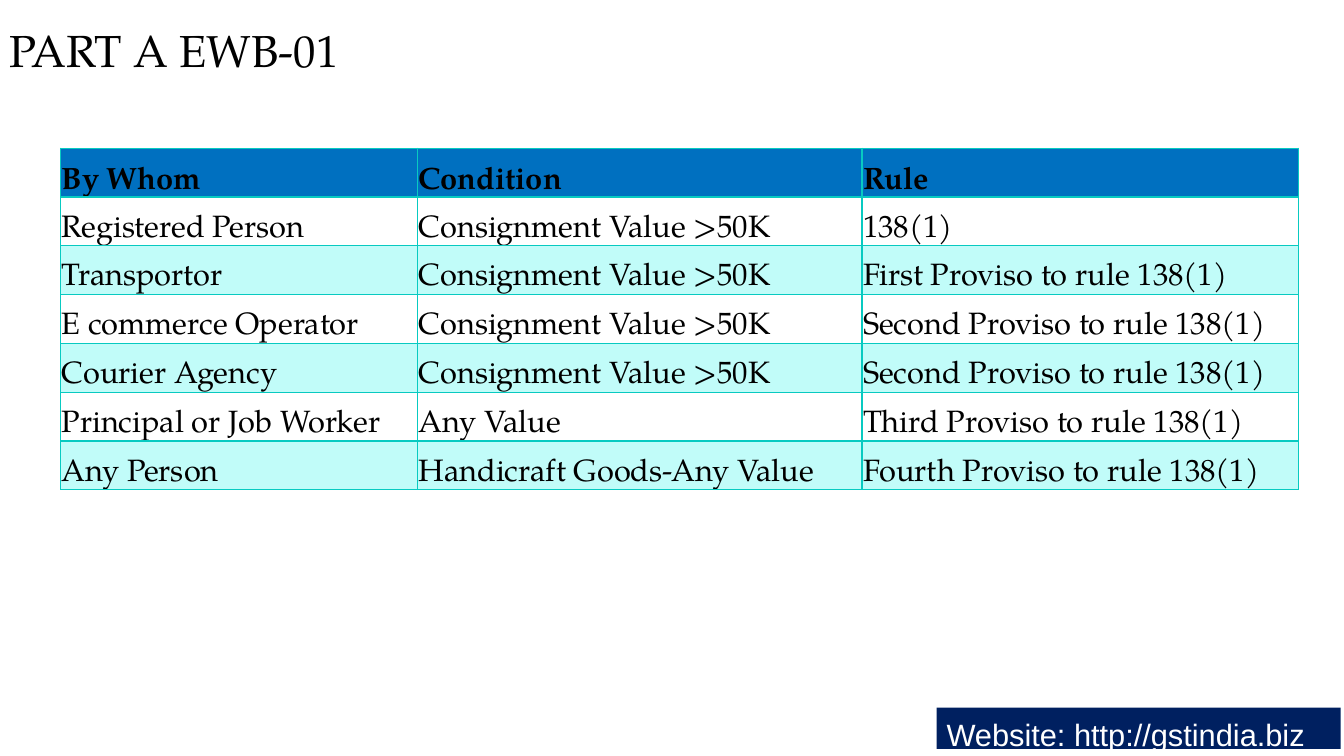
from lxml import etree
from pptx import Presentation
from pptx.dml.color import RGBColor
from pptx.enum.shapes import MSO_SHAPE
from pptx.enum.text import MSO_ANCHOR, PP_ALIGN
from pptx.oxml.ns import qn
from pptx.util import Pt

RECT = MSO_SHAPE.RECTANGLE
TOP, BOTTOM = MSO_ANCHOR.TOP, MSO_ANCHOR.BOTTOM
LEFT = PP_ALIGN.LEFT

COLORS = {
    "text": "000000",
    "header": "0070C0",
    "band": "C1FCF9",
    "border": "08CAC1",
    "footer": "002060",
    "footer_text": "FFFFFF",
}
SERIF = "TeX Gyre Pagella"
TITLE = {"name": SERIF, "size": Pt(32), "bold": False}
HEADER = {"name": SERIF, "size": Pt(22), "bold": True}
BODY = {"name": SERIF, "size": Pt(22), "bold": False}
FOOTER = {"name": "Arial", "size": Pt(22), "bold": False}


def write(tf, text, fmt, color, spacing=1.0):
    p = tf.paragraphs[0]
    p.alignment = LEFT
    p.line_spacing = spacing
    r = p.add_run()
    r.text = text
    for name, value in fmt.items():
        setattr(r.font, name, value)
    r.font.color.rgb = RGBColor.from_string(COLORS[color])


def add_borders(cell):
    tcPr = cell._tc.get_or_add_tcPr()
    for i, side in enumerate(("lnL", "lnR", "lnT", "lnB")):
        ln = etree.Element(qn(f"a:{side}"), w=str(Pt(1)))
        fill = etree.SubElement(ln, qn("a:solidFill"))
        etree.SubElement(fill, qn("a:srgbClr"), val=COLORS["border"])
        tcPr.insert(i, ln)


prs = Presentation()
prs.slide_width, prs.slide_height = Pt(960), Pt(540)
s = prs.slides.add_slide(prs.slide_layouts[6])

title = s.shapes.add_textbox(Pt(0), Pt(-2), Pt(879), Pt(61))
tf = title.text_frame
tf.word_wrap = True
tf.vertical_anchor = BOTTOM
write(tf, "PART A EWB-01", TITLE, "text", 0.9)

sp = s.shapes.add_shape(RECT, Pt(669), Pt(505.5), Pt(288.7), Pt(29.5))
sp.shadow.inherit = False
sp.fill.solid()
sp.fill.fore_color.rgb = RGBColor.from_string(COLORS["footer"])
sp.line.fill.background()
tf = sp.text_frame
tf.word_wrap = True
tf.vertical_anchor = TOP
write(tf, "Website: http://gstindia.biz", FOOTER, "footer_text", 1.07)

rows = [
    ("By Whom", "Condition", "Rule"),
    ("Registered Person", "Consignment Value >50K", "138(1)"),
    ("Transportor", "Consignment Value >50K", "First Proviso to rule 138(1)"),
    ("E commerce Operator", "Consignment Value >50K", "Second Proviso to rule 138(1)"),
    ("Courier Agency", "Consignment Value >50K", "Second Proviso to rule 138(1)"),
    ("Principal or Job Worker", "Any Value", "Third Proviso to rule 138(1)"),
    ("Any Person", "Handicraft Goods-Any Value", "Fourth Proviso to rule 138(1)"),
]
widths = [255, 317.5, 312]
row_height = 34.87
table = s.shapes.add_table(
    len(rows), len(widths), Pt(43.3), Pt(105.8), Pt(sum(widths)), Pt(row_height * len(rows))
).table
for column, width in zip(table.columns, widths):
    column.width = Pt(width)

cell_format = {
    "vertical_anchor": BOTTOM,
    "margin_left": Pt(0.7),
    "margin_right": Pt(0.7),
    "margin_top": Pt(0.7),
    "margin_bottom": Pt(0),
}
for i, row in enumerate(rows):
    table.rows[i].height = Pt(row_height)
    for j, text in enumerate(row):
        cell = table.cell(i, j)
        for name, value in cell_format.items():
            setattr(cell, name, value)
        if i % 2:
            cell.fill.background()
        else:
            cell.fill.solid()
            cell.fill.fore_color.rgb = RGBColor.from_string(COLORS["band" if i else "header"])
        add_borders(cell)
        write(cell.text_frame, text, BODY if i else HEADER, "text")

prs.save("out.pptx")
